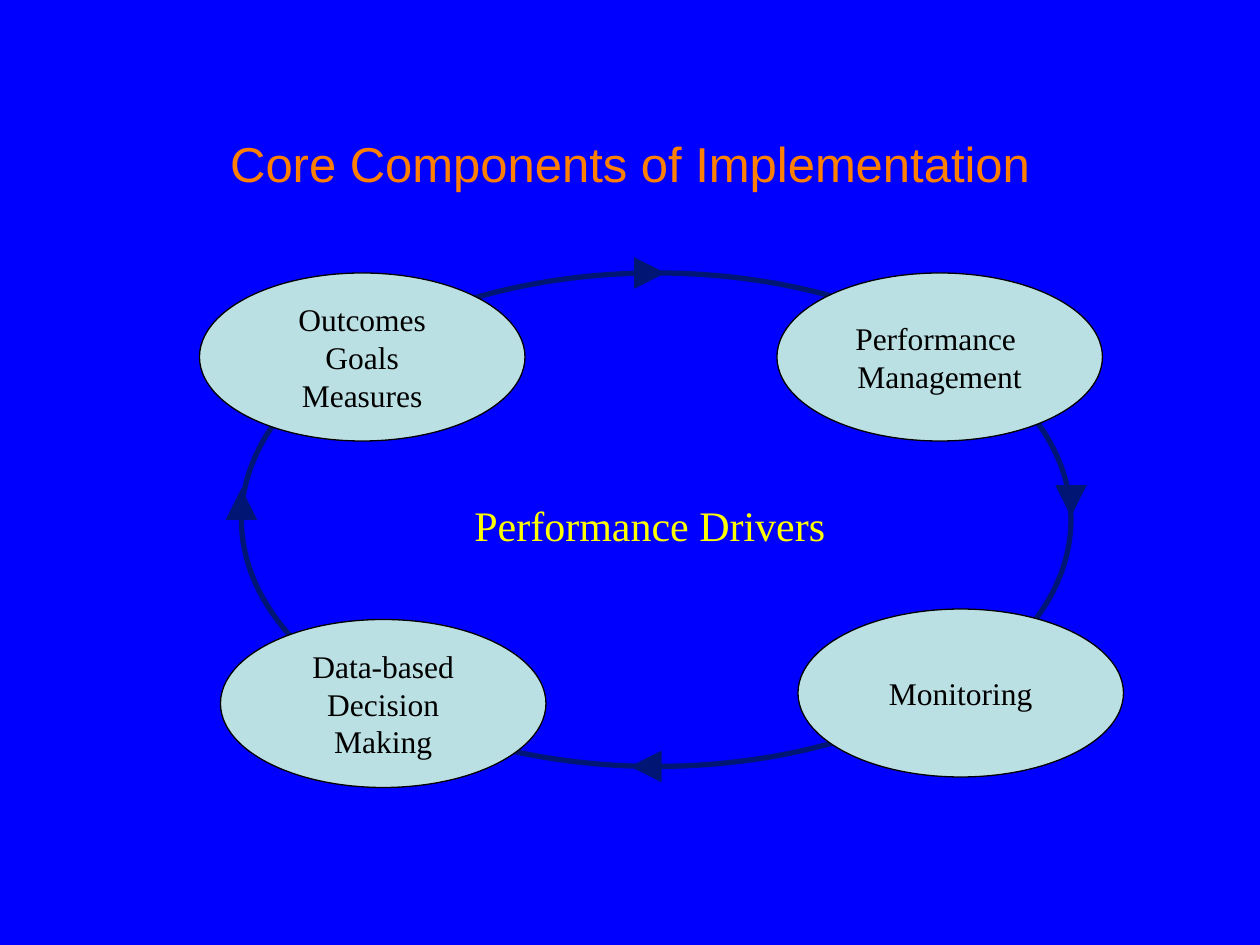
from dataclasses import dataclass

from lxml import etree
from pptx import Presentation
from pptx import util as u
from pptx.dml.color import RGBColor
from pptx.enum import shapes, text
from pptx.oxml import ns

PX = 7620
NAVY = "001574"
SERIF = "Times New Roman"


@dataclass
class Box:
    """A rectangle in px."""
    left: int
    top: int
    width: int
    height: int

    def emu(self) -> list[int]:
        """Return the rectangle in EMU."""
        return [side * PX for side in (self.left, self.top, self.width, self.height)]


@dataclass
class Stage:
    """One labelled oval on the cycle."""
    left: int
    top: int
    lines: list[str]


@dataclass
class Arrow:
    """A straight arrow between two points in px."""
    start: tuple[int, int]
    end: tuple[int, int]


RING = Box(230, 260, 790, 470)
RIGHT, BOTTOM = RING.left + RING.width, RING.top + RING.height
STAGES = [
    Stage(740, 260, ["Performance ", "Management"]),
    Stage(190, 260, ["Outcomes", "Goals", "Measures"]),
    Stage(760, 580, ["Monitoring"]),
    Stage(210, 590, ["Data-based", "Decision Making"]),
]
ARROWS = [
    Arrow((RING.left, 485), (RING.left, 465)),
    Arrow((617, RING.top), (634, RING.top)),
    Arrow((RIGHT, 485), (RIGHT, 492)),
    Arrow((617, BOTTOM), (600, BOTTOM)),
]


def color(value: str) -> RGBColor:
    """Turn a hex string into a colour."""
    return RGBColor.from_string(value)


def write(shape, lines: list[str], *, size: int, fill: str, font: str = SERIF,
          align=text.PP_ALIGN.CENTER, anchor=text.MSO_ANCHOR.MIDDLE,
          wrap: bool = True) -> None:
    """Fill a shape with formatted paragraphs."""
    frame = shape.text_frame
    frame.word_wrap = wrap
    frame.vertical_anchor = anchor
    frame.text = "\n".join(lines)
    for paragraph in frame.paragraphs:
        paragraph.alignment = align
        paragraph.font.name = font
        paragraph.font.size = u.Pt(size)
        paragraph.font.color.rgb = color(fill)


def draw_oval(slide, box: Box, *, line: str, weight: float, fill: str | None = None):
    """Draw an ellipse, hollow unless a fill is given."""
    shape = slide.shapes.add_shape(shapes.MSO_SHAPE.OVAL, *box.emu())
    shape.shadow.inherit = False
    if fill:
        shape.fill.solid()
        shape.fill.fore_color.rgb = color(fill)
    else:
        shape.fill.background()
    shape.line.color.rgb = color(line)
    shape.line.width = u.Pt(weight)
    return shape


def draw_arrow(slide, arrow: Arrow) -> None:
    """Draw a thick connector with a triangle at its end."""
    points = [value * PX for value in (*arrow.start, *arrow.end)]
    connector = slide.shapes.add_connector(shapes.MSO_CONNECTOR.STRAIGHT, *points)
    connector.line.color.rgb = color(NAVY)
    connector.line.width = u.Pt(6)
    etree.SubElement(connector.line._get_or_add_ln(), ns.qn("a:tailEnd"), type="triangle")
    etree.SubElement(connector._element.spPr, ns.qn("a:effectLst"))


def main() -> None:
    """Build and save the slide."""
    presentation = Presentation()
    presentation.slide_width, presentation.slide_height = 1200 * PX, 900 * PX
    slide = presentation.slides.add_slide(presentation.slide_layouts[6])
    slide.background.fill.solid()
    slide.background.fill.fore_color.rgb = color("0000FF")

    title = slide.shapes.add_textbox(*Box(90, 80, 1020, 150).emu())
    write(title, ["Core Components of Implementation"], size=28, fill="FF8000", font="Arial")

    draw_oval(slide, RING, line=NAVY, weight=3)
    for arrow in ARROWS:
        draw_arrow(slide, arrow)
    for stage in STAGES:
        oval = draw_oval(slide, Box(stage.left, stage.top, 310, 160),
                         line="000000", weight=0.75, fill="BBE0E3")
        write(oval, stage.lines, size=18, fill="000000")

    center = slide.shapes.add_textbox(*Box(440, 470, 359, 60).emu())
    write(center, ["Performance Drivers"], size=24, fill="FFFF00",
          align=text.PP_ALIGN.LEFT, anchor=text.MSO_ANCHOR.TOP, wrap=False)
    presentation.save("out.pptx")


if __name__ == "__main__":
    main()
